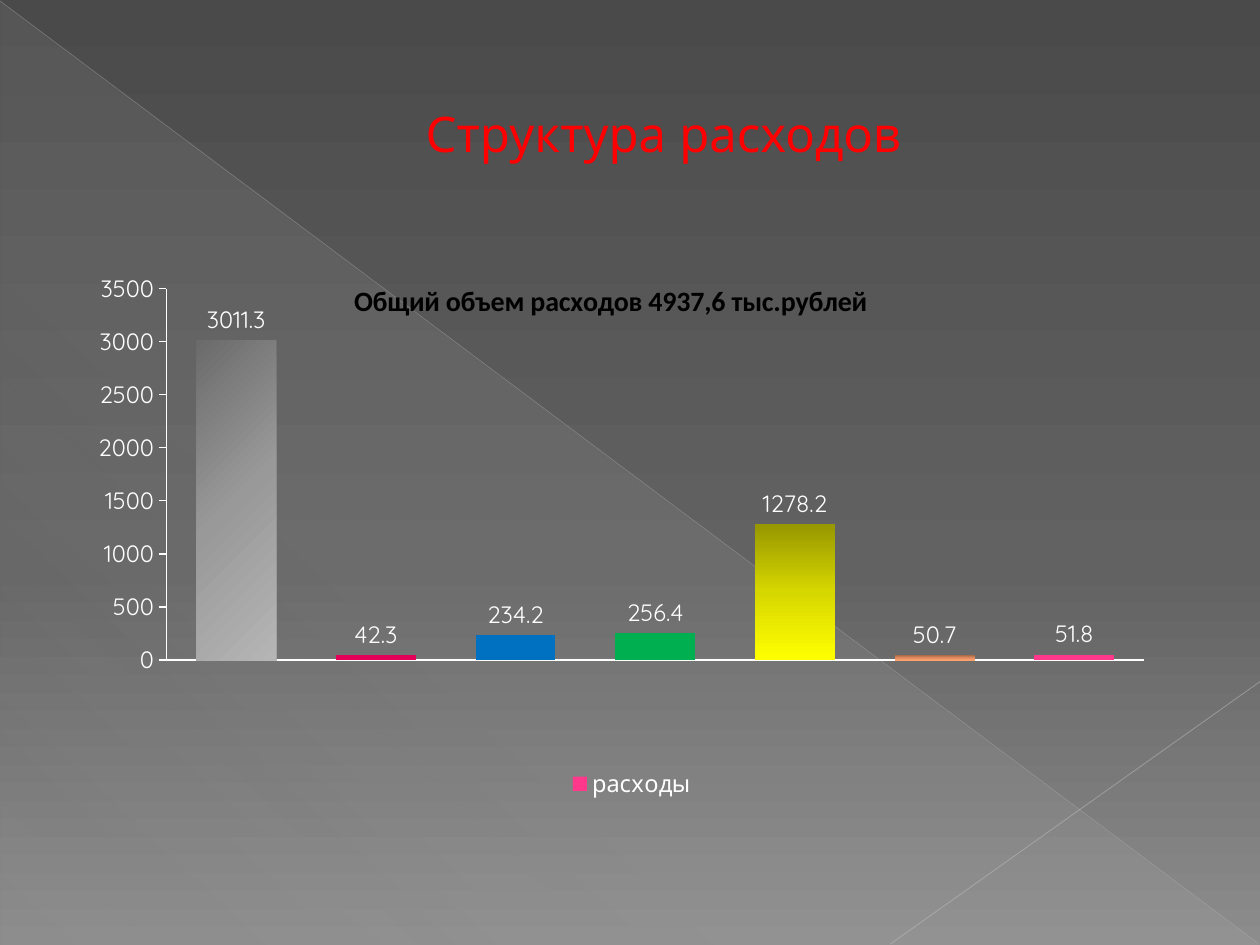
"""Build a slide with a column chart of the expenditure structure."""
from lxml.etree import SubElement
from pptx import Presentation
from pptx.chart.data import CategoryChartData
from pptx.dml.color import RGBColor
from pptx.enum.chart import XL_CHART_TYPE, XL_LABEL_POSITION, XL_LEGEND_POSITION, XL_TICK_LABEL_POSITION, XL_TICK_MARK
from pptx.enum.shapes import MSO_CONNECTOR, MSO_SHAPE
from pptx.enum.text import MSO_ANCHOR, PP_ALIGN
from pptx.oxml import parse_xml
from pptx.oxml.ns import nsdecls, qn
from pptx.util import Cm, Pt

COLORS = {
    "white": "FFFFFF", "black": "000000", "title": "FF0000", "outline": "B12761",
    "long line": "BFBFBF", "short line": "C6C6C6", "series": "FF388C",
}
FONT = "Quicksand"


def fill_gradient(fill, element, stops, angle):
    fill.gradient()
    gradient = element.find(".//" + qn("a:gradFill"))
    stop_list = gradient.find(qn("a:gsLst"))
    for old_stop in list(stop_list):
        stop_list.remove(old_stop)
    for position, color, opacity in stops:
        stop = SubElement(stop_list, qn("a:gs"), pos=str(position * 1000))
        tone = SubElement(stop, qn("a:srgbClr"), val=color)
        if opacity < 100:
            SubElement(tone, qn("a:alpha"), val=str(opacity * 1000))
    gradient.find(qn("a:lin")).set("ang", str(angle * 60000))


def place_chart_part(element, **fractions):
    layout = element.find(qn("c:layout"))
    if layout is None:
        layout = parse_xml(f"<c:layout {nsdecls('c')}/>")
        before = [child for child in element if child.tag in (qn("c:tx"), qn("c:legendPos"))]
        element.insert(element.index(before[-1]) + 1 if before else 0, layout)
    for child in list(layout):
        layout.remove(child)
    manual = SubElement(layout, qn("c:manualLayout"))
    if element.tag == qn("c:plotArea"):
        SubElement(manual, qn("c:layoutTarget"), val="inner")
    for mode in ("xMode", "yMode"):
        SubElement(manual, qn(f"c:{mode}"), val="edge")
    for name, fraction in fractions.items():
        SubElement(manual, qn(f"c:{name}"), val=str(fraction))


deck = Presentation()
deck.slide_width, deck.slide_height = Cm(25.4), Cm(19.05)
slide = deck.slides.add_slide(deck.slide_layouts[6])
fill_gradient(slide.background.fill, slide.element,
              [(0, "4A4A4A", 100), (60, "626262", 100), (100, "8C8C8C", 100)], 90)

triangle = slide.shapes.add_shape(MSO_SHAPE.RIGHT_TRIANGLE, Cm(0.02), Cm(0.04), Cm(25.36), Cm(19))
triangle.shadow.inherit = False
triangle.line.fill.background()
fill_gradient(triangle.fill, triangle.element,
              [(0, "D2D2D2", 10), (70, "D2D2D2", 8), (100, "D2D2D2", 1)], 133)

diagonals = [
    ("long line", (0, 0.02, 25.38, 19.03), 0.39, 35),
    ("short line", (25.4, 13.74, 17.95, 19.03), 0.47, 45),
]
for color_name, ends, width, opacity in diagonals:
    diagonal = slide.shapes.add_connector(MSO_CONNECTOR.STRAIGHT, *[Cm(end) for end in ends])
    diagonal.line.width = Pt(width)
    diagonal.line.color.rgb = RGBColor.from_string(COLORS[color_name])
    tone = diagonal.element.spPr.find(".//" + qn("a:srgbClr"))
    SubElement(tone, qn("a:alpha"), val=str(opacity * 1000))
    SubElement(diagonal.element.spPr, qn("a:effectLst"))

title_box = slide.shapes.add_textbox(Cm(1.27), Cm(0.74), Cm(22.86), Cm(3.89))
frame = title_box.text_frame
frame.word_wrap = True
frame.vertical_anchor = MSO_ANCHOR.MIDDLE
frame.margin_left = Cm(1.6)
frame.text = "Структура расходов"
para = frame.paragraphs[0]
para.alignment = PP_ALIGN.CENTER
span = para.runs[0]
span.font.size = Pt(28)
span.font.name = FONT
span.font.color.rgb = RGBColor.from_string(COLORS["title"])
span.font._element.insert(0, parse_xml(
    f'<a:ln {nsdecls("a")} w="6350"><a:solidFill><a:srgbClr val="{COLORS["outline"]}"/></a:solidFill></a:ln>'))

chart_data = CategoryChartData()
chart_data.categories = [str(number) for number in range(1, 8)]
chart_data.add_series("расходы", [3011.3, 42.3, 234.2, 256.4, 1278.2, 50.7, 51.8])
chart = slide.shapes.add_chart(XL_CHART_TYPE.COLUMN_CLUSTERED, Cm(0.86), Cm(4.32),
                               Cm(23.75), Cm(14), chart_data).chart
chart.font.size = Pt(17.3)
chart.font.name = FONT
chart.font.color.rgb = RGBColor.from_string(COLORS["white"])

chart.has_title = True
chart_title = chart.chart_title
chart_title.include_in_layout = False
chart_title.text_frame.text = "Общий объем расходов 4937,6 тыс.рублей"
span = chart_title.text_frame.paragraphs[0].runs[0]
span.font.size = Pt(16)
span.font.bold = True
span.font.name = "Calibri"
span.font.color.rgb = RGBColor.from_string(COLORS["black"])

chart.has_legend = True
chart.legend.position = XL_LEGEND_POSITION.BOTTOM
chart.legend.include_in_layout = False

plot = chart.plots[0]
plot.gap_width = 75
plot.vary_by_categories = False
plot.has_data_labels = True
labels = plot.data_labels
labels.show_value = True
labels.position = XL_LABEL_POSITION.OUTSIDE_END

category_axis, value_axis = chart.category_axis, chart.value_axis
category_axis.tick_label_position = XL_TICK_LABEL_POSITION.NONE
category_axis.major_tick_mark = XL_TICK_MARK.NONE
value_axis.major_tick_mark = XL_TICK_MARK.OUTSIDE
value_axis.has_major_gridlines = False
value_axis.minimum_scale, value_axis.maximum_scale, value_axis.major_unit = 0, 3500, 500
for axis in (category_axis, value_axis):
    axis.format.line.width = Pt(0.75)
    axis.format.line.color.rgb = RGBColor.from_string(COLORS["white"])
for font in (value_axis.tick_labels.font, labels.font, chart.legend.font):
    font.size = Pt(13.5)
    font.name = FONT
    font.color.rgb = RGBColor.from_string(COLORS["white"])

place_chart_part(chart_title._element, x=0.26, y=0.09)
place_chart_part(chart.legend._element, x=0.43, y=0.79, w=0.14, h=0.06)
place_chart_part(plot._element.getparent(), x=0.105, y=0.107, w=0.83, h=0.535)

series = plot.series[0]
series.invert_if_negative = False
series.format.fill.solid()
series.format.fill.fore_color.rgb = RGBColor.from_string(COLORS["series"])
for index, color in {1: "E40059", 2: "0070C0", 3: "00B050"}.items():
    column = series.points[index].format
    column.fill.solid()
    column.fill.fore_color.rgb = RGBColor.from_string(color)
column_gradients = {
    0: (("6B6B6B", "999999", "B5B5B5"), 45),
    4: (("979700", "D7D700", "FFFF00"), 90),
    5: (("965E40", "D5865C", "FC9F6D"), 90),
}
for index, (tones, angle) in column_gradients.items():
    column = series.points[index].format
    stops = [(step * 50, tone, 100) for step, tone in enumerate(tones)]
    point_element = [point for point in series._element.findall(qn("c:dPt"))
                     if point.find(qn("c:idx")).get("val") == str(index)][0]
    fill_gradient(column.fill, point_element, stops, angle)

deck.save("out.pptx")
